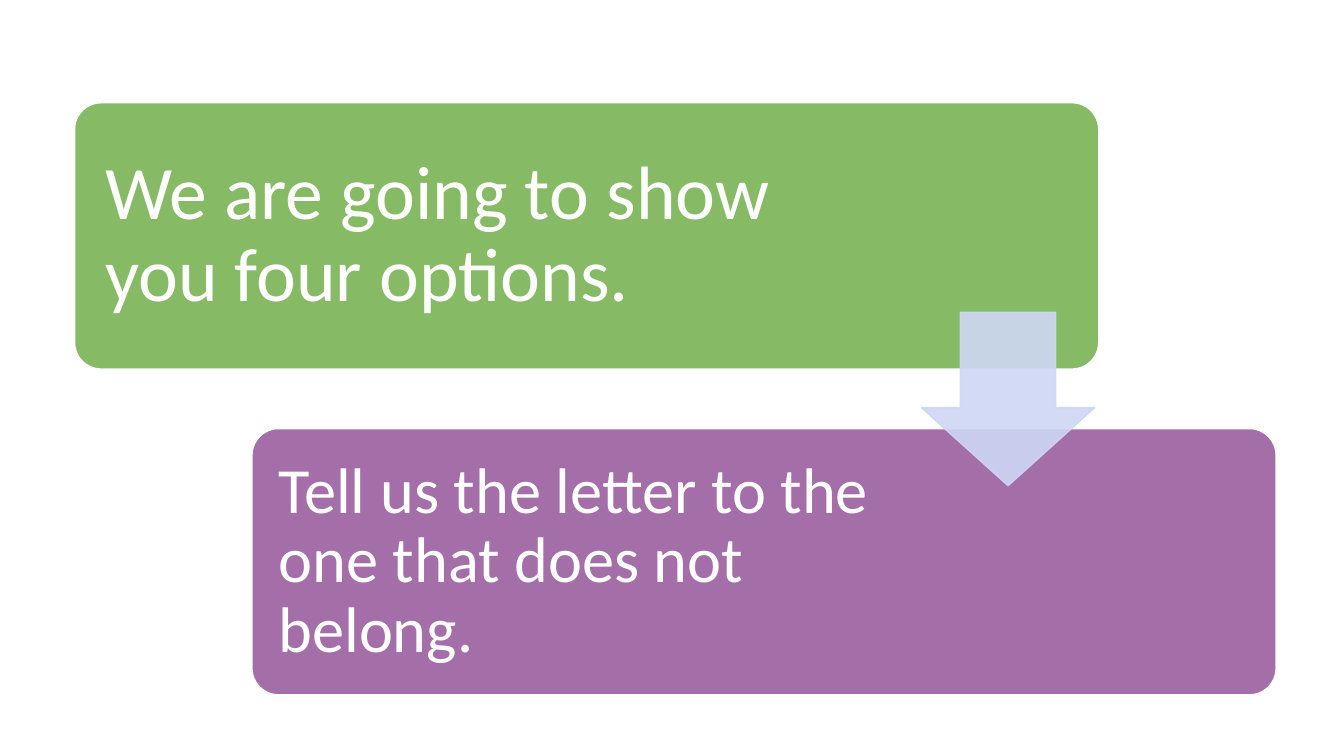
from dataclasses import dataclass

from lxml.etree import SubElement
from pptx import Presentation
from pptx.dml.color import RGBColor
from pptx.enum.shapes import MSO_SHAPE as Preset
from pptx.enum.text import MSO_ANCHOR as Anchor, PP_ALIGN as Align
from pptx.oxml.ns import qn
from pptx.util import Cm, Pt


@dataclass(frozen=True)
class Theme:
    font: str = "Calibri"
    white: str = "FFFFFF"
    green: str = "70AD47"
    purple: str = "A46FA9"
    arrow: str = "CED7F5"
    first_size: int = 54
    second_size: int = 46
    outline: int = 1


class SlideBuilder:
    """Draws the steps of a staggered process on one slide."""

    def __init__(self, slide, theme):
        self.slide = slide
        self.theme = theme

    def paint(self, fill, color, opacity):
        fill.solid()
        fill.fore_color.rgb = RGBColor.from_string(color)
        if opacity < 100:
            color_element = fill._xPr.find(qn("a:solidFill"))[0]
            SubElement(color_element, qn("a:alpha"), val=str(opacity * 1000))

    def add_shape(self, preset, box, adjustments, color, opacity, line_color, line_opacity):
        shape = self.slide.shapes.add_shape(preset, *map(Cm, box))
        shape.shadow.inherit = False
        for index, value in enumerate(adjustments):
            shape.adjustments[index] = value
        self.paint(shape.fill, color, opacity)
        shape.line.width = Pt(self.theme.outline)
        self.paint(shape.line.fill, line_color, line_opacity)

    def add_panel(self, box, color, opacity=100):
        white = self.theme.white
        self.add_shape(Preset.ROUNDED_RECTANGLE, box, [0.1], color, opacity, white, 100)

    def add_arrow(self, box, opacity):
        color = self.theme.arrow
        self.add_shape(Preset.DOWN_ARROW, box, [0.55, 0.45], color, opacity, color, opacity)

    def add_text(self, box, text, size, inset):
        frame = self.slide.shapes.add_textbox(*map(Cm, box)).text_frame
        frame.word_wrap = True
        frame.vertical_anchor = Anchor.MIDDLE
        frame.margin_left = frame.margin_right = Cm(inset)
        frame.margin_top = frame.margin_bottom = Cm(inset)
        paragraph = frame.paragraphs[0]
        paragraph.text = text
        paragraph.alignment = Align.LEFT
        paragraph.line_spacing = 0.9
        paragraph.font.name = self.theme.font
        paragraph.font.size = Pt(size)
        paragraph.font.color.rgb = RGBColor.from_string(self.theme.white)


def main():
    presentation = Presentation()
    presentation.slide_width, presentation.slide_height = Cm(33.87), Cm(19.05)
    theme = Theme()
    builder = SlideBuilder(presentation.slides.add_slide(presentation.slide_layouts[6]), theme)

    left, top, width, height = 1.88, 2.59, 25.81, 6.71
    step_x, step_y, padding = 4.47, 8.21, 0.19
    steps = [
        ("We are going to show you four options.",
         theme.green, 84, theme.first_size, 18.85, 0.58),
        ("Tell us the letter to the one that does not belong.",
         theme.purple, 100, theme.second_size, 16.48, 0.48),
    ]
    for index, (text, color, opacity, size, text_width, inset) in enumerate(steps):
        x, y = left + index * step_x, top + index * step_y
        builder.add_panel((x, y, width, height), color, opacity)
        text_box = (x + padding, y + padding, text_width, height - 2 * padding)
        builder.add_text(text_box, text, size, inset)
    builder.add_arrow((23.22, 7.87, 4.37, 4.37), 90)

    presentation.save("out.pptx")


if __name__ == "__main__":
    main()
